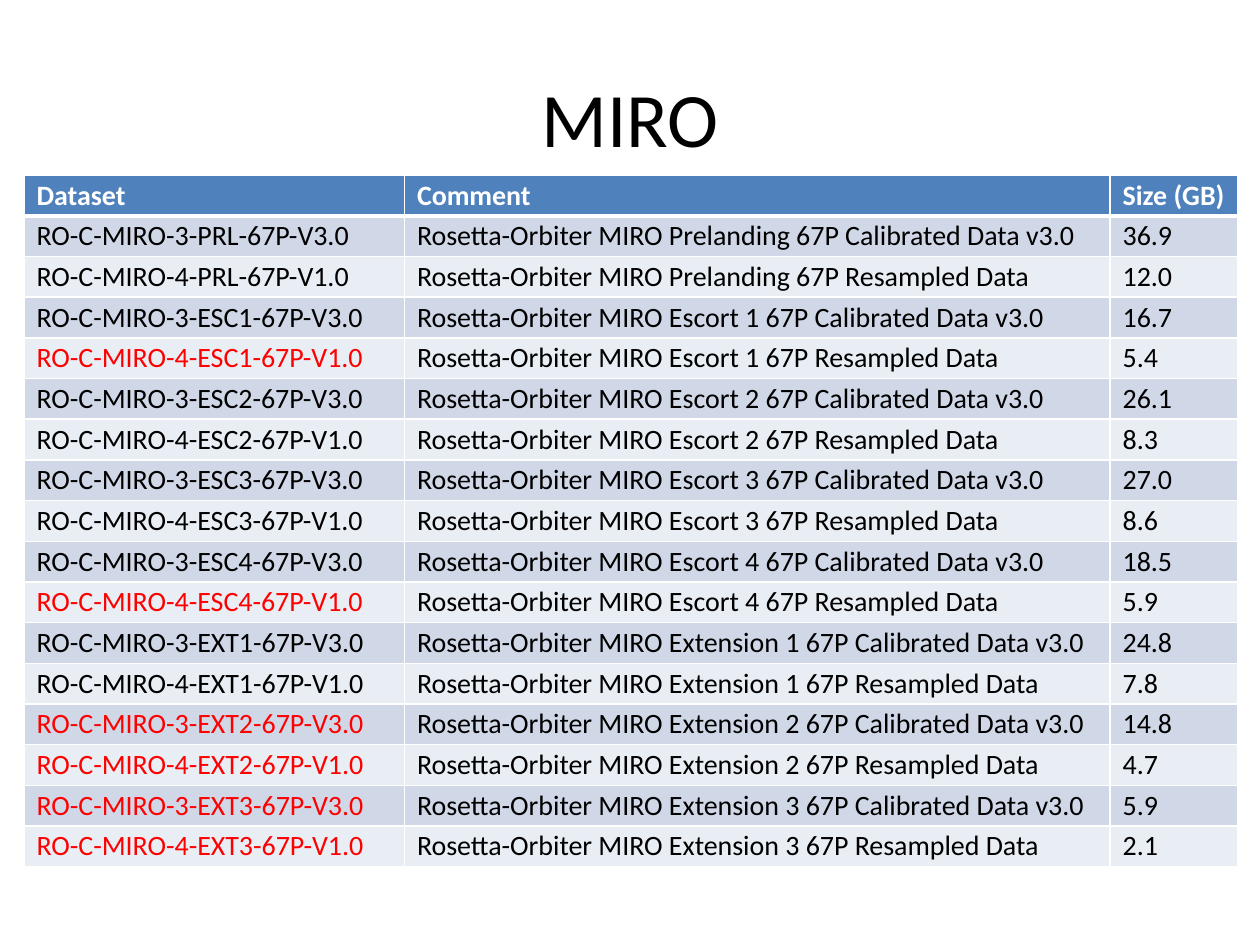
from dataclasses import dataclass

from lxml import etree
from pptx import Presentation
from pptx.dml.color import RGBColor
from pptx.enum.text import MSO_ANCHOR, PP_ALIGN
from pptx.oxml.ns import qn
from pptx.util import Inches, Pt

MIDDLE = MSO_ANCHOR.MIDDLE
CENTER, LEFT = PP_ALIGN.CENTER, PP_ALIGN.LEFT
TITLE_ONLY = 5


@dataclass(frozen=True)
class Theme:
    font: str = "Calibri"
    title_size: int = 44
    table_size: int = 16
    text: str = "000000"
    highlight: str = "FF0000"
    white: str = "FFFFFF"
    header: str = "4F81BD"
    bands: tuple = ("D0D8E8", "E9EDF4")
    line: int = 1
    header_line: int = 3


THEME = Theme()
TITLE_BOX = (0.5, 0.3, 9, 1.25)
TABLE_BOX = (0.19, 1.39, 9.63, 5.49)
COLUMN_SHARES = (3.02, 5.6, 1.01)
CELL_INDENT = 0.1

HEADERS = ("Dataset", "Comment", "Size (GB)")
LEVELS = ((3, "V3.0", "Calibrated Data v3.0"), (4, "V1.0", "Resampled Data"))
PHASES = (
    ("PRL", "Prelanding", ("36.9", "12.0")),
    ("ESC1", "Escort 1", ("16.7", "5.4")),
    ("ESC2", "Escort 2", ("26.1", "8.3")),
    ("ESC3", "Escort 3", ("27.0", "8.6")),
    ("ESC4", "Escort 4", ("18.5", "5.9")),
    ("EXT1", "Extension 1", ("24.8", "7.8")),
    ("EXT2", "Extension 2", ("14.8", "4.7")),
    ("EXT3", "Extension 3", ("5.9", "2.1")),
)
HIGHLIGHTED = {("ESC1", 4), ("ESC4", 4), ("EXT2", 3), ("EXT2", 4), ("EXT3", 3), ("EXT3", 4)}


def write_text(frame, text, size, color, bold=False, align=LEFT):
    paragraph = frame.paragraphs[0]
    paragraph.alignment = align
    run = paragraph.add_run()
    run.text = text
    run.font.name = THEME.font
    run.font.size = Pt(size)
    run.font.bold = bold
    run.font.color.rgb = RGBColor.from_string(color)


def set_borders(cell, bottom_width):
    properties = cell._tc.get_or_add_tcPr()
    for side in "LRTB":
        width = bottom_width if side == "B" else THEME.line
        line = etree.SubElement(properties, qn(f"a:ln{side}"), w=str(Pt(width)))
        fill = etree.SubElement(line, qn("a:solidFill"))
        etree.SubElement(fill, qn("a:srgbClr"), val=THEME.white)


def fill_cell(cell, text, fill, color, bold=False, bottom_width=THEME.line):
    cell.margin_left = Inches(CELL_INDENT)
    cell.margin_right = cell.margin_top = cell.margin_bottom = 0
    cell.vertical_anchor = MIDDLE
    set_borders(cell, bottom_width)
    cell.fill.solid()
    cell.fill.fore_color.rgb = RGBColor.from_string(fill)
    write_text(cell.text_frame, text, THEME.table_size, color, bold)


def dataset_rows():
    for code, phase, sizes in PHASES:
        for (level, version, product), size in zip(LEVELS, sizes):
            color = THEME.highlight if (code, level) in HIGHLIGHTED else THEME.text
            name = f"RO-C-MIRO-{level}-{code}-67P-{version}"
            comment = f"Rosetta-Orbiter MIRO {phase} 67P {product}"
            yield (name, comment, size), (color, THEME.text, THEME.text)


def place_title(slide, box, text):
    title = slide.shapes.title
    title.left, title.top, title.width, title.height = map(Inches, box)
    title.text_frame.vertical_anchor = MIDDLE
    write_text(title.text_frame, text, THEME.title_size, THEME.text, align=CENTER)


def place_table(slide, box, rows):
    left, top, width, height = map(Inches, box)
    row_count = len(rows) + 1
    table = slide.shapes.add_table(row_count, len(HEADERS), left, top, width, height).table
    for column, share in zip(table.columns, COLUMN_SHARES):
        column.width = int(width * share / sum(COLUMN_SHARES))
    for row in table.rows:
        row.height = height // row_count
    for column, text in enumerate(HEADERS):
        fill_cell(table.cell(0, column), text, THEME.header, THEME.white,
                  bold=True, bottom_width=THEME.header_line)
    for index, (texts, colors) in enumerate(rows):
        band = THEME.bands[index % len(THEME.bands)]
        for column, (text, color) in enumerate(zip(texts, colors)):
            fill_cell(table.cell(index + 1, column), text, band, color)


def main():
    presentation = Presentation()
    presentation.slide_width = Inches(10)
    presentation.slide_height = Inches(7.5)
    slide = presentation.slides.add_slide(presentation.slide_layouts[TITLE_ONLY])
    place_title(slide, TITLE_BOX, "MIRO")
    place_table(slide, TABLE_BOX, list(dataset_rows()))
    presentation.save("out.pptx")


if __name__ == "__main__":
    main()
